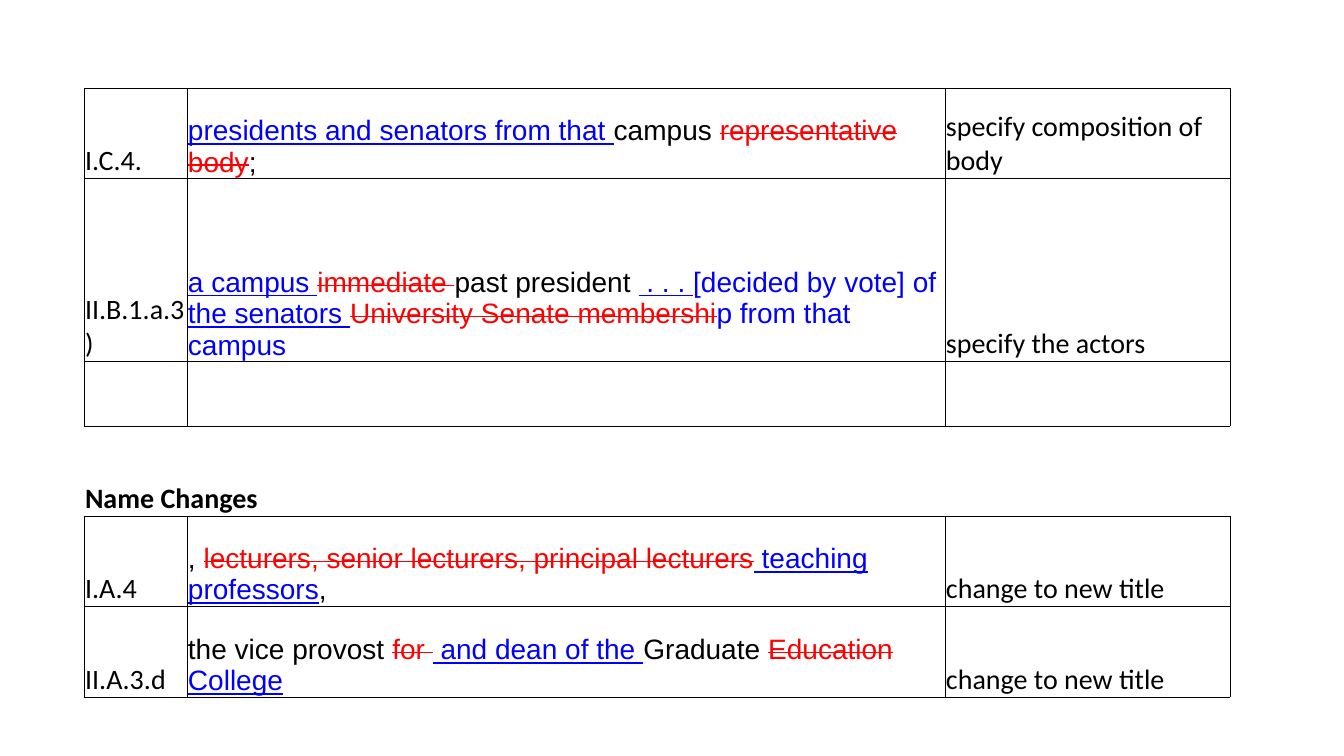
from dataclasses import dataclass

from lxml.etree import SubElement as Sub
from pptx import Presentation
from pptx.dml.color import RGBColor as Rgb
from pptx.enum.text import MSO_ANCHOR as Anchor
from pptx.oxml.ns import qn
from pptx.table import Table, _Cell as Cell
from pptx.util import Emu, Pt

COLORS = {"ink": "000000", "new": "0000FF", "cut": "FF0000", "page": "FFFFFF"}
COLS = [103, 758, 285]
LEFT, TOP = 84, 88
SIZE = 20


def px(n: int) -> Emu:
    return Emu(round(n * 914400 / 100.8))


@dataclass
class Bit:
    text: str
    color: str = "ink"
    under: bool = False
    strike: bool = False


@dataclass
class Row:
    high: int
    clause: str = ""
    edits: tuple[Bit, ...] = ()
    reason: str = ""
    title: bool = False


def new(text: str) -> Bit:
    return Bit(text, "new", under=True)


def cut(text: str) -> Bit:
    return Bit(text, "cut", strike=True)


ROWS = [
    Row(90, "I.C.4.",
        (new("presidents and senators from that "), Bit("campus "),
         cut("representative body"), Bit(";")),
        "specify composition of body"),
    Row(183, "II.B.1.a.3)",
        (new("a campus "), cut("immediate "), Bit("past president "),
         new(" . . . "), Bit("[decided by vote] of ", "new"),
         new("the senators "), cut("University Senate membershi"),
         Bit("p from that campus", "new")),
        "specify the actors"),
    Row(65),
    Row(90, "Name Changes", title=True),
    Row(90, "I.A.4",
        (Bit(", "), cut("lecturers, senior lecturers, principal lecturers"),
         new(" teaching professors"), Bit(",")),
        "change to new title"),
    Row(91, "II.A.3.d",
        (Bit("the vice provost "), cut("for "), new(" and dean of the "),
         Bit("Graduate "), cut("Education"), new(" College")),
        "change to new title"),
]


def frame(cell: Cell, sides: str) -> None:
    """Rule the given sides of a cell and clear the others."""
    props = cell._tc.get_or_add_tcPr()
    for spot, side in enumerate("LRTB"):
        line = Sub(props, qn(f"a:ln{side}"), w=str(Pt(0.5)))
        if side in sides:
            fill = Sub(line, qn("a:solidFill"))
            Sub(fill, qn("a:srgbClr"), val=COLORS["ink"])
        else:
            Sub(line, qn("a:noFill"))
        props.insert(spot, line)


def write(cell: Cell, bits: tuple[Bit, ...], face: str, bold: bool) -> None:
    para = cell.text_frame.paragraphs[0]
    for bit in bits:
        run = para.add_run()
        run.text = bit.text
        font = run.font
        font.name, font.size, font.bold = face, Pt(SIZE), bold
        font.underline = bit.under
        font.color.rgb = Rgb.from_string(COLORS[bit.color])
        if bit.strike:
            run._r.get_or_add_rPr().set("strike", "sngStrike")


def fill_row(table: Table, spot: int, row: Row) -> None:
    table.rows[spot].height = px(row.high)
    parts = [((Bit(row.clause),) if row.clause else (), "Calibri"),
             (row.edits, "Arial"),
             ((Bit(row.reason),) if row.reason else (), "Calibri")]
    for col, (bits, face) in enumerate(parts):
        cell = table.cell(spot, col)
        cell.fill.solid()
        cell.fill.fore_color.rgb = Rgb.from_string(COLORS["page"])
        cell.vertical_anchor = Anchor.BOTTOM
        cell.margin_left = cell.margin_right = cell.margin_top = px(1)
        cell.margin_bottom = 0
        frame(cell, "TB" if row.title else "LRTB")
        write(cell, bits, face, row.title)
    if row.title:
        table.cell(spot, 0).merge(table.cell(spot, 1))


def main() -> None:
    deck = Presentation()
    deck.slide_width, deck.slide_height = px(1344), px(756)
    slide = deck.slides.add_slide(deck.slide_layouts[6])

    # Table of changes
    high = sum(row.high for row in ROWS)
    table = slide.shapes.add_table(len(ROWS), len(COLS), px(LEFT), px(TOP),
                                   px(sum(COLS)), px(high)).table
    table.first_row = table.horz_banding = False
    for col, wide in zip(table.columns, COLS):
        col.width = px(wide)
    for spot, row in enumerate(ROWS):
        fill_row(table, spot, row)

    deck.save("out.pptx")


if __name__ == "__main__":
    main()
